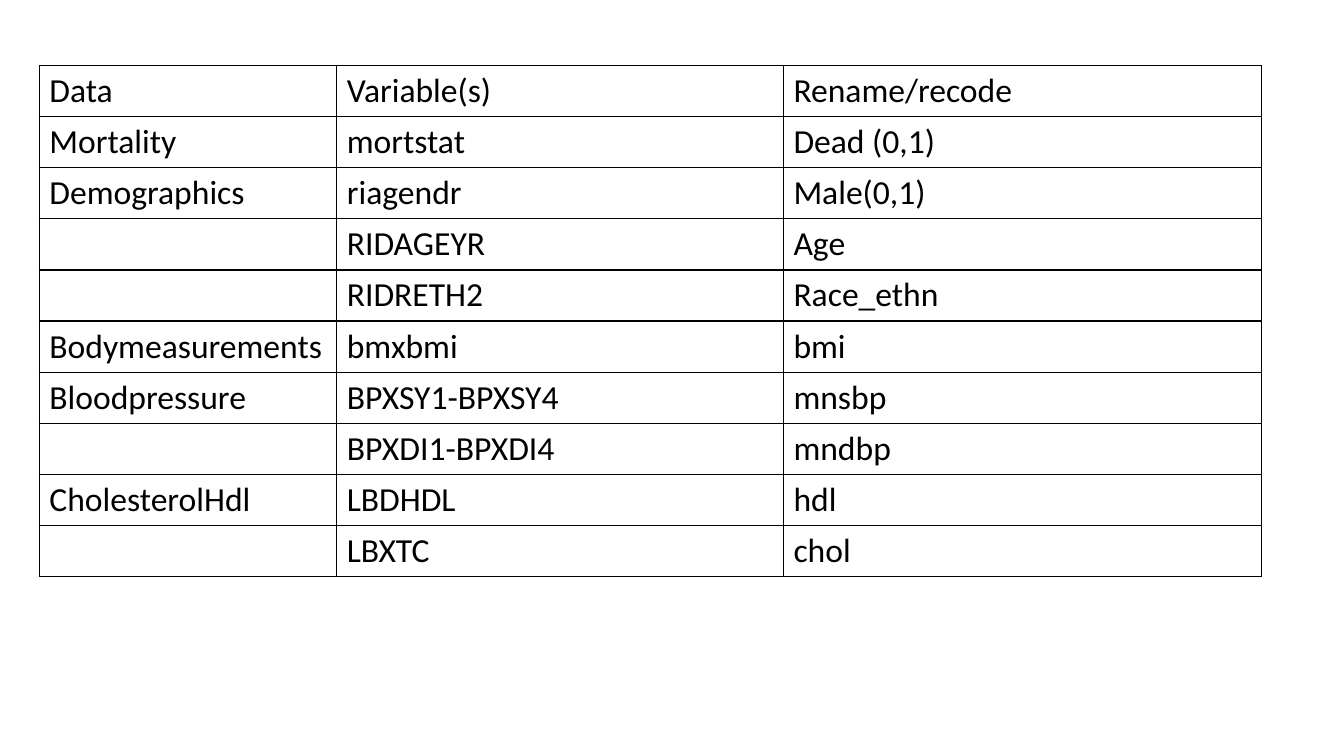
from lxml import etree
from pptx import Presentation
from pptx.dml.color import RGBColor
from pptx.oxml import ns
from pptx.util import Inches, Pt

BLACK = RGBColor(0x00, 0x00, 0x00)

COLUMN_WIDTHS = [2.95, 4.43, 4.74]
ROW_HEIGHT = 0.5
VARIABLES = [
    ("Data", "Variable(s)", "Rename/recode"),
    ("Mortality", "mortstat", "Dead (0,1)"),
    ("Demographics", "riagendr", "Male(0,1)"),
    ("", "RIDAGEYR", "Age"),
    ("", "RIDRETH2", "Race_ethn"),
    ("Bodymeasurements", "bmxbmi", "bmi"),
    ("Bloodpressure", "BPXSY1-BPXSY4", "mnsbp"),
    ("", "BPXDI1-BPXDI4", "mndbp"),
    ("CholesterolHdl", "LBDHDL", "hdl"),
    ("", "LBXTC", "chol"),
]


class PageBuilder:
    font_name = "Calibri"
    font_size = Pt(24)
    color = BLACK
    border_width = Pt(1)

    def __init__(self, page):
        self.page = page

    def table(self, left, top, widths, row_height, rows):
        frame = self.page.shapes.add_table(
            len(rows), len(widths), Inches(left), Inches(top),
            Inches(sum(widths)), Inches(row_height * len(rows)))
        table = frame.table
        table.first_row = False
        table.horz_banding = False
        for column, width in zip(table.columns, widths):
            column.width = Inches(width)
        for row, values in zip(table.rows, rows):
            row.height = Inches(row_height)
            for cell, value in zip(row.cells, values):
                self.border(cell)
                cell.fill.background()
                self.label(cell, value)

    def label(self, cell, value):
        para = cell.text_frame.paragraphs[0]
        if value:
            para.text = value
        para.font.name = self.font_name
        para.font.size = self.font_size
        para.font.color.rgb = self.color

    def border(self, cell):
        properties = cell._tc.get_or_add_tcPr()
        for side in ("a:lnL", "a:lnR", "a:lnT", "a:lnB"):
            line = etree.SubElement(properties, ns.qn(side), w=str(self.border_width))
            fill = etree.SubElement(line, ns.qn("a:solidFill"))
            etree.SubElement(fill, ns.qn("a:srgbClr"), val=str(self.color))


def main():
    deck = Presentation()
    deck.slide_width = Inches(13.33)
    deck.slide_height = Inches(7.5)
    page = deck.slides.add_slide(deck.slide_layouts[6])
    builder = PageBuilder(page)
    builder.table(0.39, 0.65, COLUMN_WIDTHS, ROW_HEIGHT, VARIABLES)
    deck.save("out.pptx")


if __name__ == "__main__":
    main()
